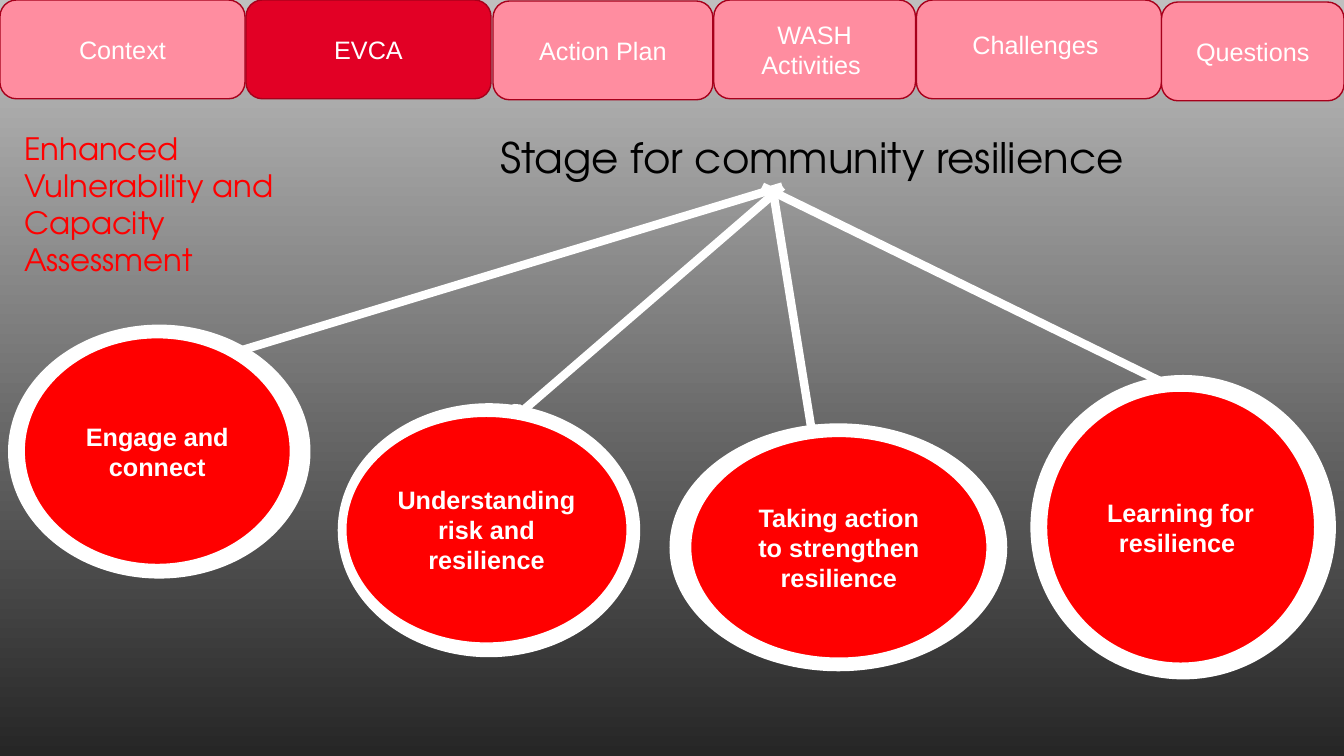
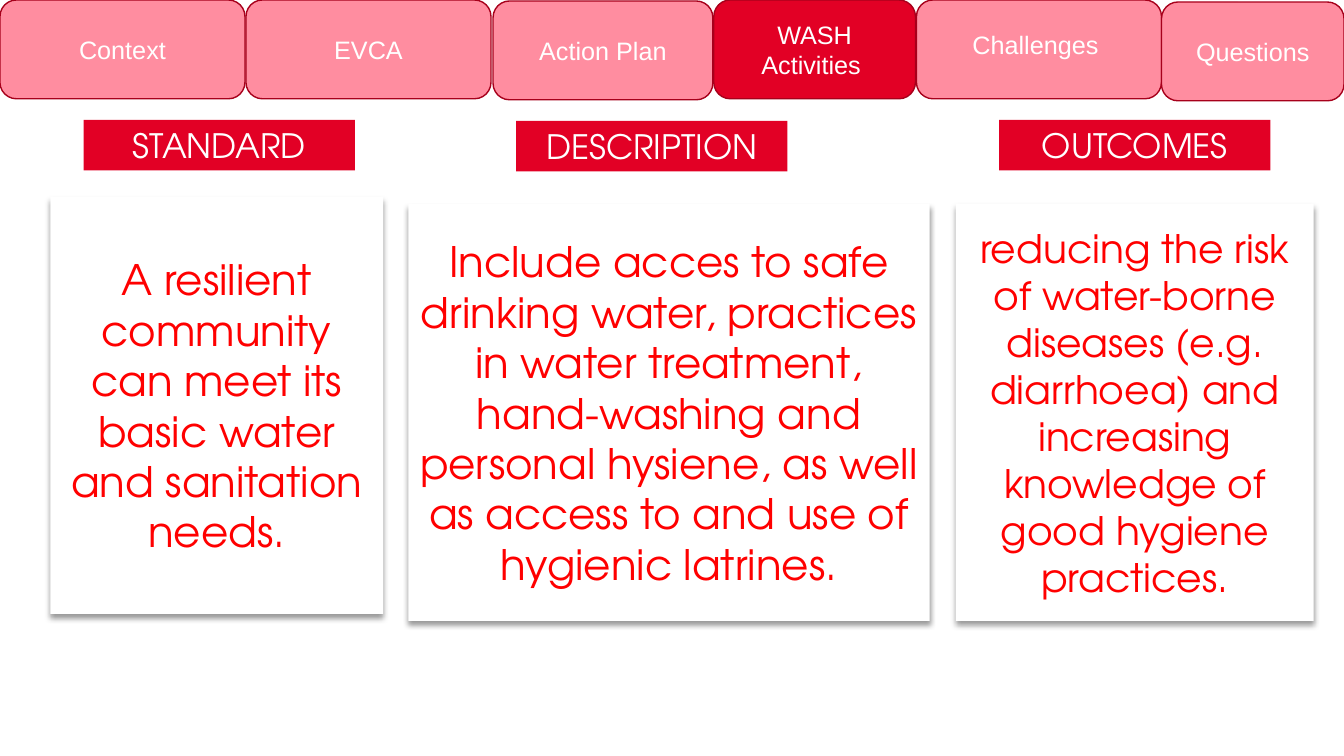
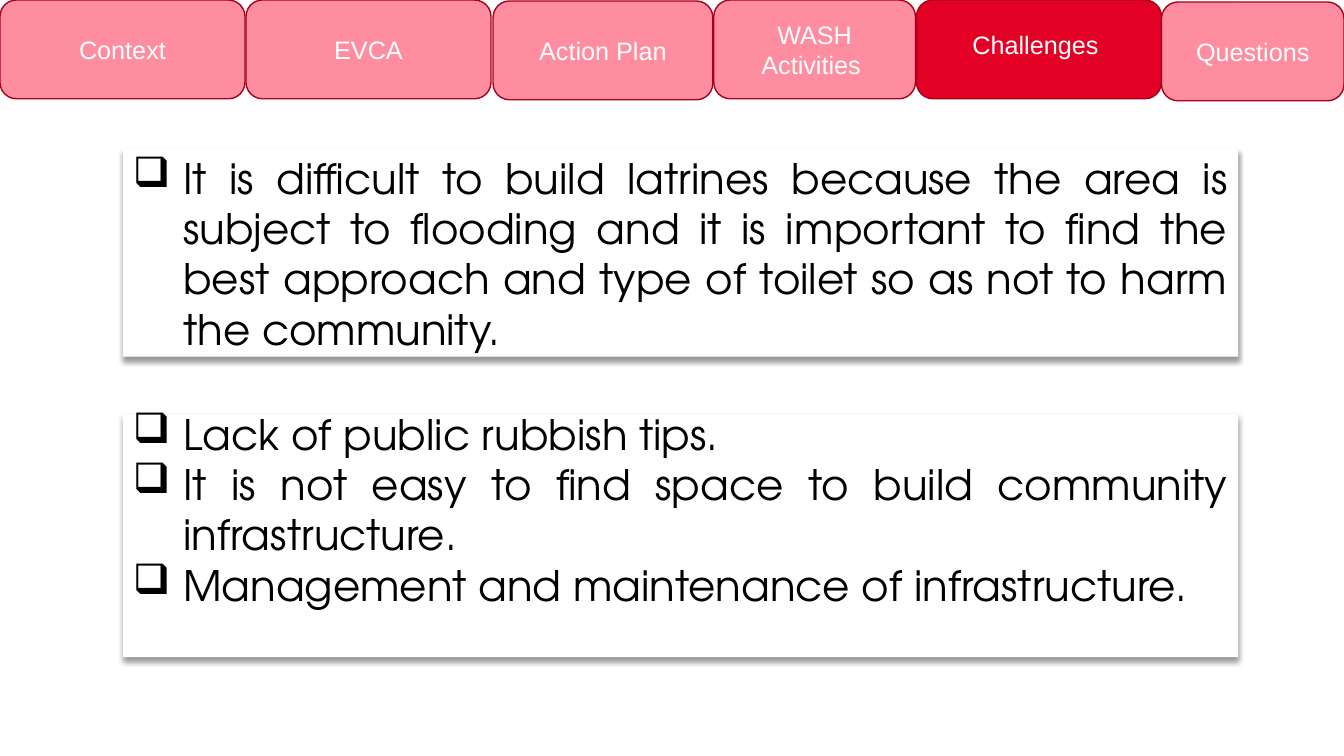
import pptx
import pptx.dml.color
import pptx.enum.shapes
import pptx.enum.text
import pptx.oxml
import pptx.oxml.ns
import pptx.util

Inches = pptx.util.Inches
Pt = pptx.util.Pt
Kind = pptx.enum.shapes.MSO_SHAPE
Align = pptx.enum.text.PP_ALIGN
Anchor = pptx.enum.text.MSO_ANCHOR
NS = pptx.oxml.ns.nsdecls("a")


class Theme:
    white = "FFFFFF"
    black = "000000"
    red = "FF0000"
    crimson = "E20025"
    pink = "FF8DA0"
    edge = "A7001B"
    silver = "BFBFBF"
    coal = "262626"
    sans = "Arial"
    round = "TeX Gyre Adventor"
    small = 18
    side = 22
    label = 24
    body = 28
    large = 30


TABS = [
    ("Context", 0, 0, 2.43),
    ("EVCA", 2.44, 0, 2.43),
    ("Action Plan", 4.89, 0.01, 2.18),
    ("WASH Activities ", 7.08, 0, 2),
    ("Challenges ", 9.09, 0, 2.43),
    ("Questions", 11.52, 0.02, 1.81),
]

STAGES = [
    ("Engage and connect", 7.76, (2.28, 3.51),
     (0.08, 3.22, 3, 2.52), (0.24, 3.35, 2.64, 2.25)),
    ("Understanding risk and resilience", 7.76, (5.12, 4.13),
     (3.35, 4, 3, 2.52), (3.43, 4.13, 2.79, 2.25)),
    ("Taking action to strengthen resilience", 7.66, (8.06, 4.33),
     (6.64, 4.2, 3.35, 2.46), (6.85, 4.33, 2.94, 2.2)),
    ("Learning for resilience ", 7.56, (11.71, 3.88),
     (10.22, 3.72, 3.03, 3.02), (10.38, 3.88, 2.66, 2.7)),
]

COLUMNS = [
    ("STANDARD", (0.83, 1.19), (0.5, 1.95, 3.3), Theme.large,
     "A resilient community can meet its basic water and sanitation needs."),
    ("DESCRIPTION", (5.12, 1.2), (4.05, 2.02, 5.17), Theme.large,
     "Include acces to safe drinking water, practices in water treatment, "
     "hand-washing and personal hysiene, as well as access to and use of "
     "hygienic latrines."),
    ("OUTCOMES", (9.91, 1.19), (9.48, 2.02, 3.55), Theme.body,
     "reducing the risk of water-borne diseases (e.g. diarrhoea) and "
     "increasing knowledge of good hygiene practices."),
]

ISSUES = [
    (1.48, 2.06, 0.05, [
        "It is difficult to build latrines because the area is subject to "
        "flooding and it is important to find the best approach and type of "
        "toilet so as not to harm the community."]),
    (4.11, 2.41, 0.58, [
        "Lack of public rubbish tips.",
        "It is not easy to find space to build community infrastructure.",
        "Management and maintenance of infrastructure."]),
]


def tint(code):
    return pptx.dml.color.RGBColor.from_string(code)


def write(shape, lines, size, color, font=Theme.round, bold=False,
          align=Align.CENTER, anchor=Anchor.MIDDLE, bullet=None):
    frame = shape.text_frame
    frame.word_wrap = True
    frame.vertical_anchor = anchor
    frame.text = "\n".join(lines)
    for para in frame.paragraphs:
        para.alignment = align
        if bullet:
            props = para._p.get_or_add_pPr()
            props.set("marL", str(Inches(0.5)))
            props.set("indent", str(Inches(-0.5)))
            props.append(pptx.oxml.parse_xml(f'<a:buChar {NS} char="{bullet}"/>'))
        for run in para.runs:
            run.font.name = font
            run.font.size = Pt(size)
            run.font.bold = bold
            run.font.color.rgb = tint(color)


def block(slide, kind, rect, fill, line=None):
    shape = slide.shapes.add_shape(kind, *map(Inches, rect))
    shape.shadow.inherit = False
    shape.fill.solid()
    shape.fill.fore_color.rgb = tint(fill)
    if line:
        shape.line.color.rgb = tint(line)
        shape.line.width = Pt(1)
    else:
        shape.line.fill.background()
    return shape


def card(slide, rect):
    shape = block(slide, Kind.RECTANGLE, rect, Theme.white)
    glow = shape._element.spPr.find(pptx.oxml.ns.qn("a:effectLst"))
    glow.append(pptx.oxml.parse_xml(
        f'<a:outerShdw {NS} blurRad="{Pt(4)}" dist="{Pt(3)}" dir="5400000" '
        f'rotWithShape="0"><a:srgbClr val="{Theme.black}">'
        '<a:alpha val="40000"/></a:srgbClr></a:outerShdw>'))
    return shape


def caption(slide, rect, text, size, color, align):
    box = slide.shapes.add_textbox(*map(Inches, rect))
    write(box, [text], size, color, align=align, anchor=Anchor.TOP)


def spoke(slide, start, end):
    line = slide.shapes.add_connector(
        pptx.enum.shapes.MSO_CONNECTOR.STRAIGHT, *map(Inches, start + end))
    line.line.color.rgb = tint(Theme.white)
    line.line.width = Pt(6)
    line.line._get_or_add_ln().append(
        pptx.oxml.parse_xml(f'<a:tailEnd {NS} type="oval"/>'))
    line._element.spPr.append(pptx.oxml.parse_xml(f"<a:effectLst {NS}/>"))


def page(deck, active):
    slide = deck.slides.add_slide(deck.slide_layouts[6])
    for name, left, top, width in TABS:
        fill = Theme.crimson if name == active else Theme.pink
        tab = block(slide, Kind.ROUNDED_RECTANGLE, (left, top, width, 0.98),
                    fill, Theme.edge)
        write(tab, [name], Theme.small, Theme.white, Theme.sans)
        if name == "Challenges ":
            tab.text_frame.margin_bottom = Inches(0.15)
    return slide


def shade(slide):
    fill = slide.background.fill
    fill.gradient()
    fill.gradient_angle = 270
    for stop, spot, code in zip(fill.gradient_stops, (0, 1),
                                (Theme.silver, Theme.coal)):
        stop.position = spot
        stop.color.rgb = tint(code)


def stages(deck):
    slide = page(deck, "EVCA")
    shade(slide)
    caption(slide, (4.58, 1.26, 6.95, 0.61), "Stage for community resilience",
            Theme.large, Theme.black, Align.CENTER)
    for text, hub, end, ring, disc in STAGES:
        spoke(slide, (hub, 1.85), end)
        block(slide, Kind.FLOWCHART_CONNECTOR, ring, Theme.white)
        shape = block(slide, Kind.FLOWCHART_CONNECTOR, disc, Theme.red,
                      Theme.white)
        write(shape, [text], Theme.small, Theme.white, Theme.sans, bold=True)
    caption(slide, (0.14, 1.24, 3.28, 1.58),
            "Enhanced Vulnerability and Capacity Assessment",
            Theme.side, Theme.red, Align.LEFT)


def columns(deck):
    slide = page(deck, "WASH Activities ")
    for head, spot, rect, size, text in COLUMNS:
        write(card(slide, rect + (4.14,)), [text], size, Theme.red)
        label = block(slide, Kind.RECTANGLE, spot + (2.69, 0.5), Theme.crimson)
        write(label, [head], Theme.label, Theme.white, anchor=Anchor.TOP)


def issues(deck):
    slide = page(deck, "Challenges ")
    for top, height, foot, lines in ISSUES:
        shape = card(slide, (1.22, top, 11.06, height))
        write(shape, lines, Theme.large, Theme.black, align=Align.JUSTIFY,
              bullet="❑")
        shape.text_frame.margin_bottom = Inches(foot)


def main():
    deck = pptx.Presentation()
    deck.slide_width = Inches(13.33)
    deck.slide_height = Inches(7.5)
    stages(deck)
    columns(deck)
    issues(deck)
    deck.save("out.pptx")


if __name__ == "__main__":
    main()
